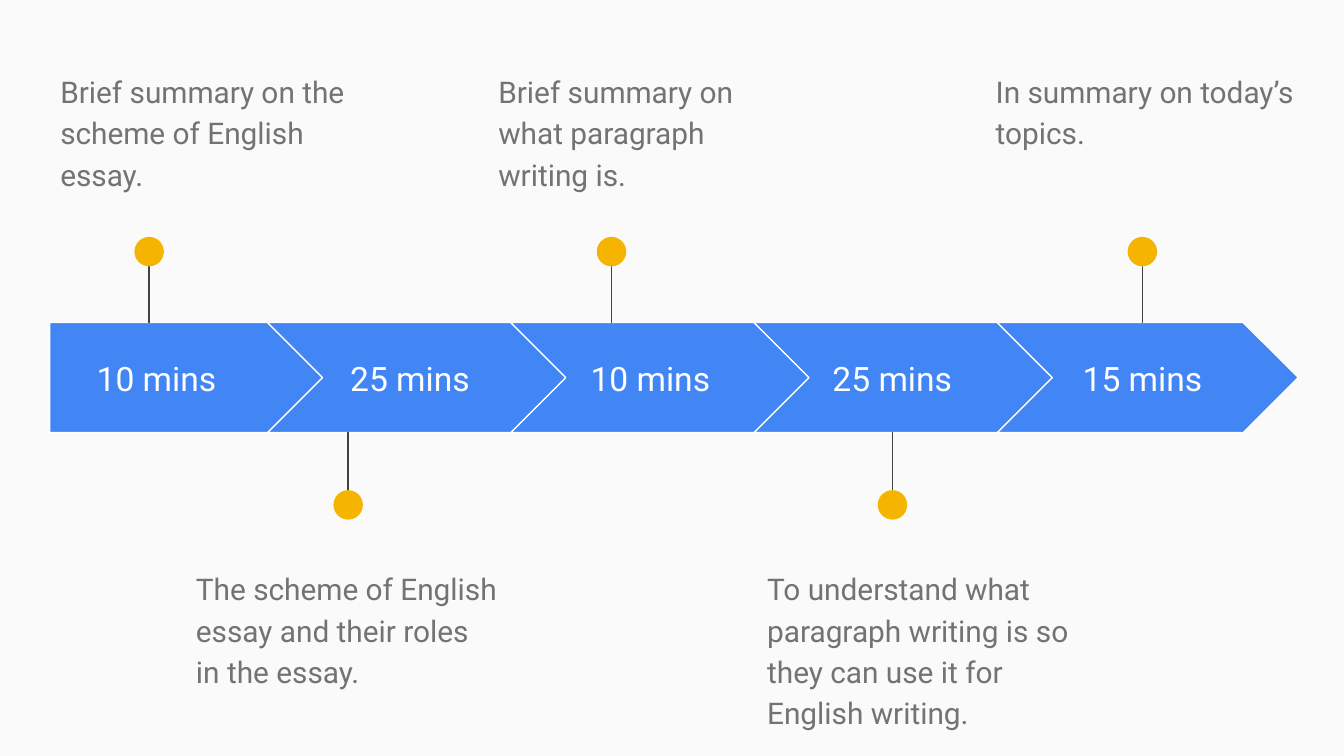
"""Build a lesson timeline slide with five timed steps and pinned captions."""
from pptx import Presentation
from pptx.dml.color import RGBColor
from pptx.enum.shapes import MSO_CONNECTOR as CONN, MSO_SHAPE as SHAPE
from pptx.enum.text import MSO_ANCHOR as ANCHOR, PP_ALIGN as ALIGN
from pptx.oxml.ns import qn
from pptx.util import Pt

PAPER = RGBColor(0xFA, 0xFA, 0xFA)
BLUE = RGBColor(0x42, 0x85, 0xF4)
YELLOW = RGBColor(0xF4, 0xB4, 0x00)
WHITE = RGBColor(0xFF, 0xFF, 0xFF)
GREY = RGBColor(0x73, 0x73, 0x73)
DARK = RGBColor(0x42, 0x42, 0x42)

STEPS = [
    ("10 mins", 26.6, 114.5, 79.9, 25.2,
     "Brief summary on the scheme of English essay."),
    ("25 mins", 167.8, 103.7, 186.5, 97.9,
     "The scheme of English essay and their roles in the essay."),
    ("10 mins", 296.6, 103.7, 327.6, 259.9,
     "Brief summary on what paragraph writing is."),
    ("25 mins", 426.2, 103.7, 478.1, 403.9,
     "To understand what paragraph writing is so they can use it for English writing."),
    ("15 mins", 560.2, 103.7, 612, 526.3,
     "In summary on today’s topics."),
]
BAR_TOP, BAR_H = 172.8, 59
CHEVRON_LEFT, CHEVRON_W, PITCH = 143.3, 161.3, 130.32
DOT = 15.8


def add_text(s, text, left, top, width, height, size, color):
    tf = s.shapes.add_textbox(Pt(left), Pt(top), Pt(width), Pt(height)).text_frame
    tf.word_wrap = True
    tf.margin_left = tf.margin_right = tf.margin_top = tf.margin_bottom = Pt(7.2)
    p = tf.paragraphs[0]
    r = p.add_run()
    r.text = text
    r.font.name = "Roboto"
    r.font.size = Pt(size)
    r.font.color.rgb = color
    return tf, p


def add_filled(s, kind, left, top, width, height, color):
    sp = s.shapes.add_shape(kind, Pt(left), Pt(top), Pt(width), Pt(height))
    sp.shadow.inherit = False
    sp.fill.solid()
    sp.fill.fore_color.rgb = color
    return sp


prs = Presentation()
prs.slide_width, prs.slide_height = Pt(720), Pt(405)
s = prs.slides.add_slide(prs.slide_layouts[6])
s.background.fill.solid()
s.background.fill.fore_color.rgb = PAPER

for i, (time, time_left, time_w, pin_x, caption_left, caption) in enumerate(STEPS):
    if i == 0:
        kind, left, width = SHAPE.PENTAGON, 26.6, 147.6
    else:
        kind, left, width = SHAPE.CHEVRON, CHEVRON_LEFT + PITCH * (i - 1), CHEVRON_W
    sp = add_filled(s, kind, left, BAR_TOP, width, BAR_H, BLUE)
    sp.adjustments[0] = 0.5
    sp.line.color.rgb = WHITE
    sp.line.width = Pt(0.75)

    tf, p = add_text(s, time, time_left, 184.3, time_w, 36.7, 18, WHITE)
    tf.vertical_anchor = ANCHOR.MIDDLE
    p.alignment = ALIGN.CENTER

    if i % 2 == 0:
        stem_start, stem_end, dot_top, caption_top = 129.6, 173.3, 126.9, 29.5
    else:
        stem_start, stem_end, dot_top, caption_top = 275, 231.3, 262.6, 295.9
    stem = s.shapes.add_connector(
        CONN.STRAIGHT, Pt(pin_x), Pt(stem_start), Pt(pin_x), Pt(stem_end))
    stem.line.color.rgb = DARK
    stem.line.width = Pt(0.75)
    stem._element.spPr.add_effectLst() if hasattr(
        stem._element.spPr, "add_effectLst") else stem._element.spPr.append(
        stem._element.makeelement(qn("a:effectLst"), {}))
    dot = add_filled(s, SHAPE.OVAL, pin_x - DOT / 2, dot_top, DOT, DOT, YELLOW)
    dot.line.fill.background()

    tf, p = add_text(s, caption, caption_left, caption_top, 176.4, 71.3, 16, GREY)
    p.line_spacing = 1.15
    p.space_after = Pt(16)

prs.save("out.pptx")
